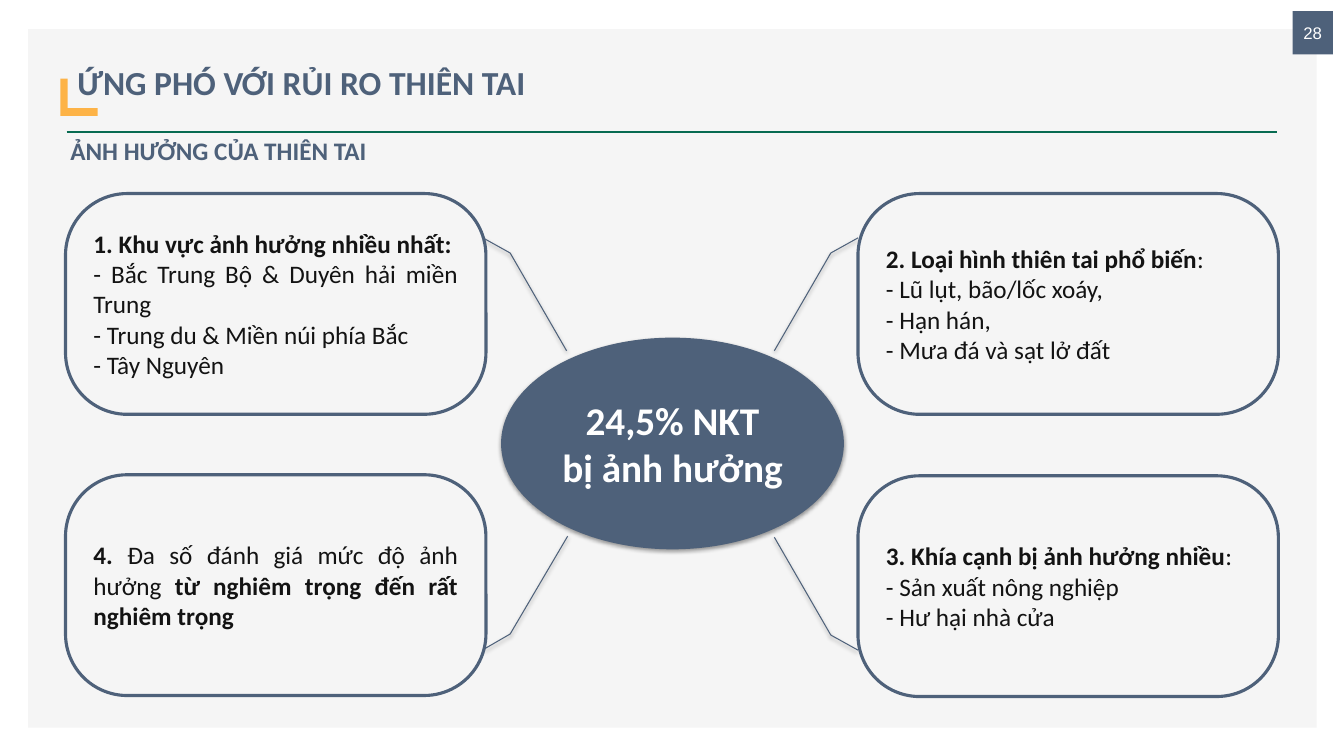
from dataclasses import dataclass

from lxml import etree
from pptx import Presentation
from pptx.dml.color import RGBColor
from pptx.enum.shapes import MSO_CONNECTOR, MSO_SHAPE
from pptx.enum.text import MSO_ANCHOR, PP_ALIGN
from pptx.oxml.ns import qn
from pptx.util import Inches, Pt

RECTANGLE = MSO_SHAPE.RECTANGLE
ROUNDED = MSO_SHAPE.ROUNDED_RECTANGLE
HUB = MSO_SHAPE.FLOWCHART_CONNECTOR
STRAIGHT = MSO_CONNECTOR.STRAIGHT
TOP, MIDDLE = MSO_ANCHOR.TOP, MSO_ANCHOR.MIDDLE
LEFT, CENTER, JUSTIFY = PP_ALIGN.LEFT, PP_ALIGN.CENTER, PP_ALIGN.JUSTIFY

SLATE, PALE, GREEN, AMBER = "4E617A", "F5F5F5", "076B51", "FDB347"
WHITE, INK, BLACK = "FFFFFF", "131313", "000000"

Point = tuple[float, float]
Box = tuple[float, float, float, float]


@dataclass(frozen=True)
class Run:
    text: str
    bold: bool = False


@dataclass(frozen=True)
class Card:
    """A rounded box and the bent line (outer, elbow, inner) tying it to the hub."""
    corner: Point
    outer: Point
    elbow: Point
    inner: Point
    paragraphs: list[list[Run]]


CARD_SIZE = (4.17, 2.19)
CARDS = [
    Card((0.65, 1.92), (4.79, 2.36), (5.06, 2.51), (5.62, 3.48), [
        [Run("1. Khu vực ảnh hưởng nhiều nhất:", True)],
        [Run("- Bắc Trung Bộ & Duyên hải miền Trung")],
        [Run("- Trung du & Miền núi phía Bắc")],
        [Run("- Tây Nguyên")],
    ]),
    Card((8.51, 1.92), (8.51, 2.36), (8.24, 2.51), (7.68, 3.48), [
        [Run("2. Loại hình thiên tai phổ biến", True), Run(":")],
        [Run("- Lũ lụt, bão/lốc xoáy,")],
        [Run("- Hạn hán,")],
        [Run("- Mưa đá và sạt lở đất")],
    ]),
    Card((8.51, 4.72), (8.51, 6.45), (8.24, 6.3), (7.68, 5.33), [
        [Run("3. Khía cạnh bị ảnh hưởng nhiều", True), Run(":")],
        [Run("- Sản xuất nông nghiệp")],
        [Run("- Hư hại nhà cửa")],
    ]),
    Card((0.65, 4.71), (4.8, 6.44), (5.06, 6.29), (5.63, 5.32), [
        [Run("4. ", True), Run("Đa số đánh giá mức độ ảnh hưởng "),
         Run("từ nghiêm trọng đến rất nghiêm trọng", True)],
    ]),
]


def rgb(color: str) -> RGBColor:
    return RGBColor.from_string(color)


def add_soft_shadow(effects) -> None:
    shadow = etree.SubElement(
        effects, qn("a:outerShdw"), blurRad=str(Pt(3.1)), dist=str(Pt(1.6)),
        dir="5400000", rotWithShape="0")
    color = etree.SubElement(shadow, qn("a:srgbClr"), val=BLACK)
    etree.SubElement(color, qn("a:alpha"), val="38000")


def draw_shape(slide, kind, box: Box, *, fill: str | None = None,
               line: str | None = None, shadow: bool = False):
    shape = slide.shapes.add_shape(kind, *map(Inches, box))
    if fill:
        shape.fill.solid()
        shape.fill.fore_color.rgb = rgb(fill)
    else:
        shape.fill.background()
    if line:
        shape.line.color.rgb = rgb(line)
        shape.line.width = Pt(2.25)
    else:
        shape.line.fill.background()
    shape.shadow.inherit = False
    if shadow:
        add_soft_shadow(shape._element.spPr.find(qn("a:effectLst")))
    return shape


def draw_line(slide, start: Point, end: Point, *, color: str, width: float,
              shadow: bool = False) -> None:
    line = slide.shapes.add_connector(STRAIGHT, *map(Inches, start + end))
    line.line.color.rgb = rgb(color)
    line.line.width = Pt(width)
    effects = etree.SubElement(line._element.spPr, qn("a:effectLst"))
    if shadow:
        add_soft_shadow(effects)


def write(shape, paragraphs: list[list[Run]], *, size: float, color: str,
          font: str = "Calibri", align=LEFT, anchor=MIDDLE,
          spacing: float | None = None) -> None:
    frame = shape.text_frame
    frame.word_wrap = True
    frame.vertical_anchor = anchor
    for index, runs in enumerate(paragraphs):
        paragraph = frame.add_paragraph() if index else frame.paragraphs[0]
        paragraph.alignment = align
        if spacing:
            paragraph.line_spacing = spacing
        for part in runs:
            run = paragraph.add_run()
            run.text = part.text
            run.font.name = font
            run.font.size = Pt(size)
            run.font.bold = part.bold
            run.font.color.rgb = rgb(color)


def draw_frame(slide) -> None:
    draw_shape(slide, RECTANGLE, (0.28, 0.29, 12.78, 6.93), fill=PALE)
    draw_line(slide, (0.66, 1.31), (12.67, 1.31), color=GREEN, width=2)
    page_number = draw_shape(slide, RECTANGLE, (12.82, 0.11, 0.4, 0.43), fill=SLATE)
    write(page_number, [[Run("28")]], size=12, color=WHITE, font="Arial", align=CENTER)


def draw_headings(slide) -> None:
    draw_shape(slide, RECTANGLE, (0.6, 0.78, 0.37, 0.37), fill=AMBER)
    heading = draw_shape(slide, RECTANGLE, (0.67, 0.36, 12.07, 0.71), fill=PALE)
    write(heading, [[Run("ỨNG PHÓ VỚI RỦI RO THIÊN TAI", True)]],
          size=24, color=SLATE, spacing=1.5)
    subheading = slide.shapes.add_textbox(*map(Inches, (0.6, 1.29, 6.16, 0.4)))
    write(subheading, [[Run("ẢNH HƯỞNG CỦA THIÊN TAI", True)]],
          size=18, color=SLATE, anchor=TOP)


def draw_card(slide, card: Card) -> None:
    for end in (card.inner, card.outer):
        draw_line(slide, card.elbow, end, color=SLATE, width=0.75, shadow=True)
    body = draw_shape(slide, ROUNDED, card.corner + CARD_SIZE, line=SLATE)
    body.adjustments[0] = 0.279
    write(body, card.paragraphs, size=18, color=INK, align=JUSTIFY)


def main() -> None:
    deck = Presentation()
    deck.slide_width, deck.slide_height = Inches(13.33), Inches(7.5)
    slide = deck.slides.add_slide(deck.slide_layouts[6])
    draw_frame(slide)
    draw_headings(slide)
    hub = draw_shape(slide, HUB, (4.97, 3.35, 3.4, 2.1), fill=SLATE, shadow=True)
    write(hub, [[Run("24,5% NKT", True)], [Run("bị ảnh hưởng", True)]],
          size=28, color=WHITE, align=CENTER)
    for card in CARDS:
        draw_card(slide, card)
    deck.save("out.pptx")


if __name__ == "__main__":
    main()
